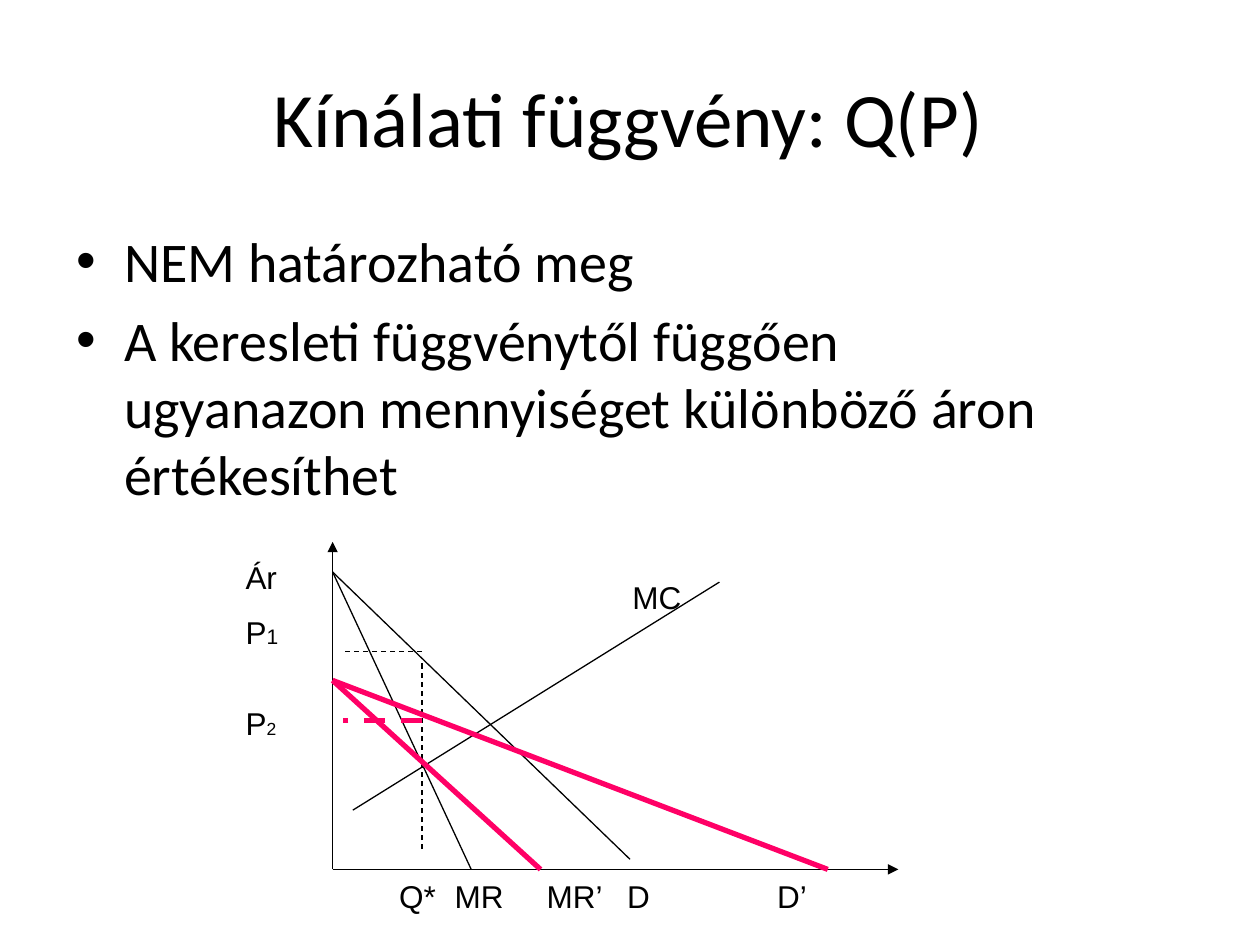
from lxml.etree import SubElement
from pptx import Presentation
from pptx.dml.color import RGBColor
from pptx.enum.dml import MSO_LINE
from pptx.enum.shapes import MSO_CONNECTOR, MSO_SHAPE
from pptx.enum.text import MSO_ANCHOR, PP_ALIGN
from pptx.oxml.ns import qn
from pptx.util import Inches, Pt

BLACK, PINK, WHITE = "000000", "FF0066", "FFFFFF"


def color(value):
    """Turn a hex string into a colour."""
    return RGBColor.from_string(value)


def set_all(target, formats):
    """Set every attribute named in a dict of format values."""
    for name, value in formats.items():
        setattr(target, name, value)


def place(shape, box):
    """Move and size a shape to a box in inches."""
    names = ("left", "top", "width", "height")
    set_all(shape, dict(zip(names, map(Inches, box))))


def add_run(paragraph, text, size, face="Arial"):
    """Append black text to a paragraph."""
    run = paragraph.add_run()
    run.text = text
    set_all(run.font, {"size": Pt(size), "name": face})
    run.font.color.rgb = color(BLACK)


def add_title(slide, box, text):
    """Fill the title placeholder."""
    title = slide.shapes.title
    place(title, box)
    set_all(title.text_frame, {"margin_left": Inches(1.08),
                               "vertical_anchor": MSO_ANCHOR.MIDDLE})
    heading = title.text_frame.paragraphs[0]
    heading.alignment = PP_ALIGN.CENTER
    add_run(heading, text, 44, "Calibri")


def add_body(slide, box, statements):
    """Fill the body placeholder with its bulleted statements."""
    body = slide.placeholders[1]
    place(body, box)
    frame = body.text_frame
    for index, statement in enumerate(statements):
        item = frame.add_paragraph() if index else frame.paragraphs[0]
        item.space_before = Pt(6.4 if index else 0)
        add_run(item, statement, 32, "Calibri")


def add_line(slide, start, end, hue=BLACK, width=0.75, dashed=False, arrow=False):
    """Draw a straight line between two points in inches."""
    line = slide.shapes.add_connector(
        MSO_CONNECTOR.STRAIGHT, *map(Inches, (*start, *end)))
    line.line.color.rgb = color(hue)
    line.line.width = Pt(width)
    if dashed:
        line.line.dash_style = MSO_LINE.DASH
    if arrow:
        SubElement(line.line._get_or_add_ln(), qn("a:tailEnd"), type="triangle")
    SubElement(line._element.spPr, qn("a:effectLst"))


def add_quantity_labels(slide, box):
    """Label the horizontal axis, aligned by tab stops."""
    strip = slide.shapes.add_shape(MSO_SHAPE.RECTANGLE, *map(Inches, box))
    strip.shadow.inherit = False
    strip.fill.solid()
    strip.fill.fore_color.rgb = color(WHITE)
    strip.line.fill.background()
    set_all(strip.text_frame, {"word_wrap": True, "vertical_anchor": MSO_ANCHOR.TOP})
    labels = strip.text_frame.paragraphs[0]
    labels.alignment = PP_ALIGN.LEFT
    tabs = SubElement(labels._p.get_or_add_pPr(), qn("a:tabLst"))
    for stop in (0.44, 1.17, 1.81, 3):
        SubElement(tabs, qn("a:tab"), pos=str(Inches(stop)), algn="l")
    add_run(labels, "Q*\tMR\tMR’\tD\tD’", 18)


def add_labels(slide, box, rows):
    """Stack labels of (space before, runs of text and size)."""
    frame = slide.shapes.add_textbox(*map(Inches, box)).text_frame
    frame.word_wrap = True
    for index, (gap, runs) in enumerate(rows):
        label = frame.add_paragraph() if index else frame.paragraphs[0]
        label.space_before = Pt(gap)
        for text, size in runs:
            add_run(label, text, size)


def add_market_diagram(slide, box):
    """Draw axes, cost, demand and revenue curves from the box's corners."""
    left, top, width, height = box
    base = top + height
    origin = (left, base)
    demand_start, shifted_start = (left, top + 0.24), (left, top + 1.1)
    quantity, guide_end = left + 0.71, left + 0.08
    first_price, second_price = top + 0.87, top + 1.42

    add_quantity_labels(slide, (left + 0.43, base + 0.01, 3.7, 0.4))
    for tip in ((left, top), (left + width, base)):
        add_line(slide, origin, tip, arrow=True)
    add_line(slide, demand_start, (left + 2.36, base - 0.08))
    add_line(slide, demand_start, (left + 1.1, base))
    add_line(slide, (left + 0.16, base - 0.47), (left + 3.07, top + 0.32))
    add_line(slide, (quantity, base - 0.16), (quantity, top + 0.95), dashed=True)
    add_line(slide, (quantity, first_price), (guide_end, first_price), dashed=True)
    for reach in (3.93, 1.65):
        add_line(slide, shifted_start, (left + reach, base), PINK, 3)
    add_line(slide, (quantity, second_price), (guide_end, second_price),
             PINK, 3, dashed=True)
    add_labels(slide, (left - 0.79, top + 0.08, 0.55, 2.06), [
        (0, [("Ár", 18)]),
        (10, [("P", 18), ("1", 12)]),
        (30, [("P", 18), ("2", 10)]),
    ])
    add_labels(slide, (left + 2.28, top + 0.24, 0.71, 0.4), [(0, [("MC", 18)])])


def main():
    """Build and save the slide."""
    deck = Presentation()
    set_all(deck, {"slide_width": Inches(10), "slide_height": Inches(7.5)})
    slide = deck.slides.add_slide(deck.slide_layouts[1])
    add_title(slide, (0, 0.3, 9, 1.25), "Kínálati függvény: Q(P)")
    add_body(slide, (0.51, 1.75, 8.19, 4.24), [
        "NEM határozható meg",
        "A keresleti függvénytől függően ugyanazon mennyiséget "
        "különböző áron értékesíthet",
    ])
    add_market_diagram(slide, (2.64, 4.3, 4.49, 2.6))
    deck.save("out.pptx")


if __name__ == "__main__":
    main()
